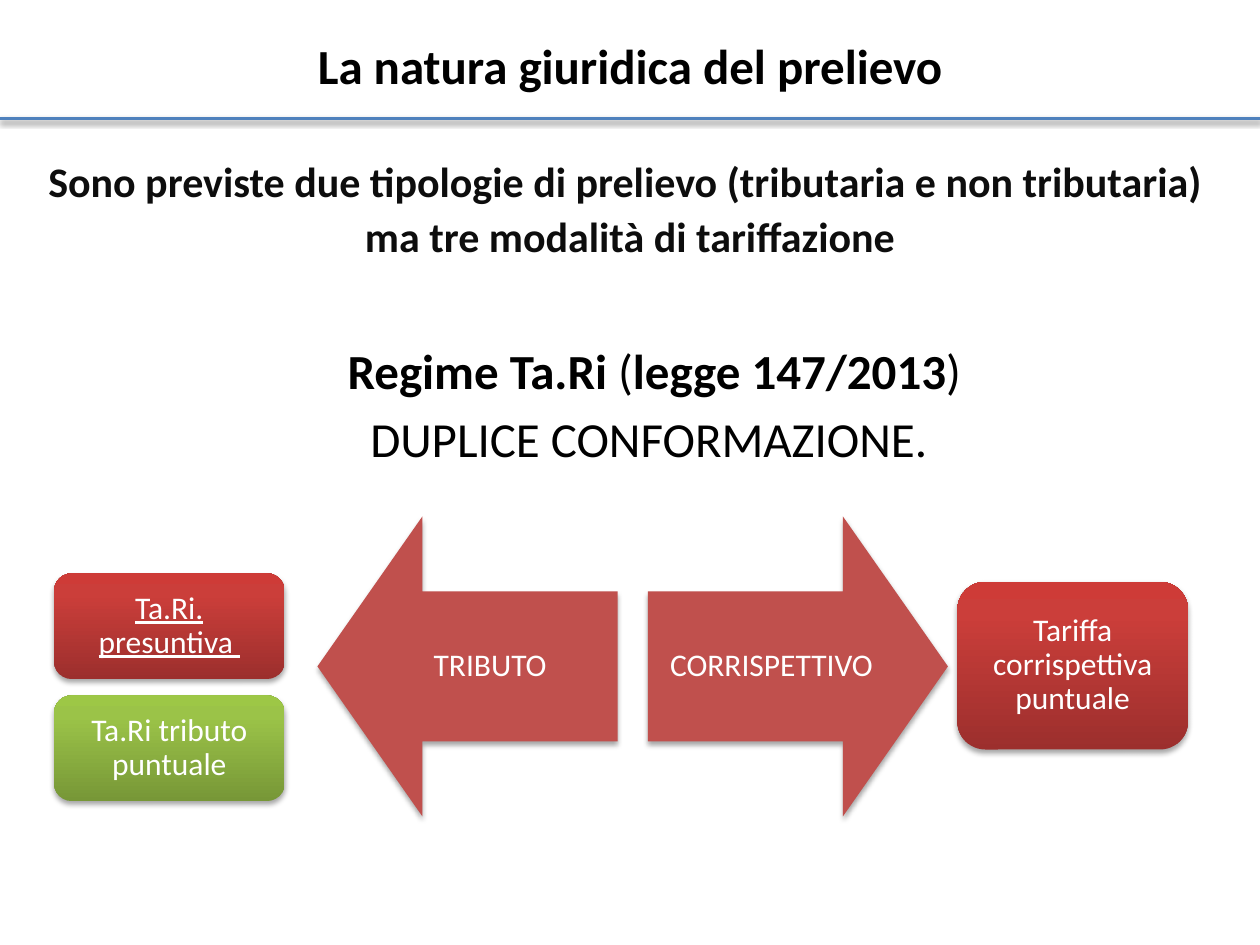
from copy import deepcopy
from dataclasses import dataclass

from lxml.etree import SubElement
from pptx import Presentation
from pptx.dml.color import RGBColor as Rgb
from pptx.enum.shapes import MSO_CONNECTOR as Connector, MSO_SHAPE as Shape
from pptx.enum.text import MSO_ANCHOR as Anchor, MSO_AUTO_SIZE as AutoSize, PP_ALIGN as Align
from pptx.oxml.ns import qn
from pptx.util import Cm, Pt


@dataclass(frozen=True)
class Theme:
    font: str = "Calibri"
    heading_size: int = 28
    intro_size: int = 24
    label_size: int = 18
    black: str = "000000"
    intro_color: str = "0D0D0D"
    white: str = "FFFFFF"
    rule: str = "4F81BD"
    arrow: str = "C0504D"
    red: tuple = ((0, "9C2F2D"), (0.8, "CB3E3A"), (1, "CE3B37"))
    green: tuple = ((0, "779737"), (0.8, "9BC348"), (1, "9DC746"))


def write(frame, paragraphs, *, font, size, color, bold=False, underline=False,
          spacing=1.0, before=0, margin=None):
    """Fill a frame; a paragraph is a string or a list of (text, bold) pairs."""
    frame.word_wrap = True
    frame.auto_size = AutoSize.NONE
    if margin is not None:
        frame.margin_left = frame.margin_right = Cm(margin)
        frame.margin_top = frame.margin_bottom = Cm(margin)
    for index, content in enumerate(paragraphs):
        para = frame.paragraphs[0] if index == 0 else frame.add_paragraph()
        para.alignment = Align.CENTER
        para.line_spacing = spacing
        para.space_before = Pt(before)
        pieces = [(content, bold)] if isinstance(content, str) else content
        for text, is_bold in pieces:
            span = para.add_run()
            span.text = text
            span.font.name = font
            span.font.size = Pt(size)
            span.font.bold = is_bold
            span.font.underline = underline
            span.font.color.rgb = Rgb.from_string(color)


def add_shadow(item, distance=1.8, opacity=35):
    """Add a soft shadow straight below; the line must be set before."""
    effects = SubElement(item._element.spPr, qn("a:effectLst"))
    shadow = SubElement(effects, qn("a:outerShdw"), blurRad=str(Pt(3.1)),
                        dist=str(Pt(distance)), dir="5400000", rotWithShape="0")
    color = SubElement(shadow, qn("a:srgbClr"), val="000000")
    SubElement(color, qn("a:alpha"), val=str(opacity * 1000))


def place(item, *bounds):
    item.left, item.top, item.width, item.height = map(Cm, bounds)


class SlideBuilder:
    def __init__(self, slide, theme):
        self.slide = slide
        self.theme = theme

    def placeholder(self, index, bounds, paragraphs, anchor, **style):
        box = self.slide.placeholders[index]
        place(box, *bounds)
        box.text_frame.vertical_anchor = anchor
        write(box.text_frame, paragraphs, font=self.theme.font,
              size=self.theme.heading_size, color=self.theme.black, **style)

    def text(self, bounds, paragraphs, **style):
        box = self.slide.shapes.add_textbox(*map(Cm, bounds))
        write(box.text_frame, paragraphs, font=self.theme.font, **style)

    def rule(self, top, width):
        line = self.slide.shapes.add_connector(
            Connector.STRAIGHT, Cm(0), Cm(top), Cm(width), Cm(top))
        line.line.color.rgb = Rgb.from_string(self.theme.rule)
        line.line.width = Pt(2)
        add_shadow(line, distance=1.6, opacity=38)

    def label_shape(self, kind, bounds, label, margin, underline=False):
        shape = self.slide.shapes.add_shape(kind, *map(Cm, bounds))
        shape.line.fill.background()
        shape.text_frame.vertical_anchor = Anchor.MIDDLE
        write(shape.text_frame, [label], font=self.theme.font, size=self.theme.label_size,
              color=self.theme.white, underline=underline, spacing=0.9, margin=margin)
        return shape

    def arrow(self, kind, left, label):
        side = 6.05
        shape = self.label_shape(kind, (left, 10.41, side, side), label, margin=0.36)
        shape.adjustments[0], shape.adjustments[1] = 0.5, 0.35
        shape.fill.solid()
        shape.fill.fore_color.rgb = Rgb.from_string(self.theme.arrow)
        add_shadow(shape)

    def card(self, left, top, height, label, colors, underline=False):
        shape = self.label_shape(Shape.ROUNDED_RECTANGLE, (left, top, 4.65, height),
                                 label, margin=0.18, underline=underline)
        shape.fill.gradient()
        shape.fill.gradient_angle = 90
        stop_list = shape._element.spPr.find(".//" + qn("a:gsLst"))
        stop_list.append(deepcopy(stop_list[0]))
        for stop, (position, color) in zip(shape.fill.gradient_stops, colors):
            stop.position = position
            stop.color.rgb = Rgb.from_string(color)
        add_shadow(shape)


def main():
    deck = Presentation()
    deck.slide_width, deck.slide_height = Cm(25.4), Cm(19.05)
    theme = Theme()
    page = SlideBuilder(deck.slides.add_slide(deck.slide_layouts[0]), theme)

    page.placeholder(0, (0, 0, 25.4, 2.6), ["La natura giuridica del prelievo"],
                     Anchor.MIDDLE, bold=True)
    page.rule(2.39, 25.4)
    page.text((0.3, 2.9, 24.8, 2.75),
              ["Sono previste due tipologie di prelievo (tributaria e non tributaria) ",
               "ma tre modalità di tariffazione"],
              size=theme.intro_size, color=theme.intro_color, bold=True, spacing=1.1)
    page.placeholder(1, (4.3, 6.73, 17.78, 2.4),
                     [[("Regime Ta.Ri", True), (" (", False),
                       ("legge 147/2013", True), (")", False)],
                      "DUPLICE CONFORMAZIONE. "],
                     Anchor.TOP, before=5.6)

    page.arrow(Shape.LEFT_ARROW, 6.4, "TRIBUTO ")
    page.arrow(Shape.RIGHT_ARROW, 13.06, "CORRISPETTIVO")

    page.card(1.09, 11.56, 2.13, "Ta.Ri. presuntiva ", theme.red, underline=True)
    page.card(1.09, 14.02, 2.13, "Ta.Ri tributo puntuale", theme.green)
    page.card(19.3, 11.73, 3.38, "Tariffa corrispettiva puntuale", theme.red)

    deck.save("out.pptx")


if __name__ == "__main__":
    main()
